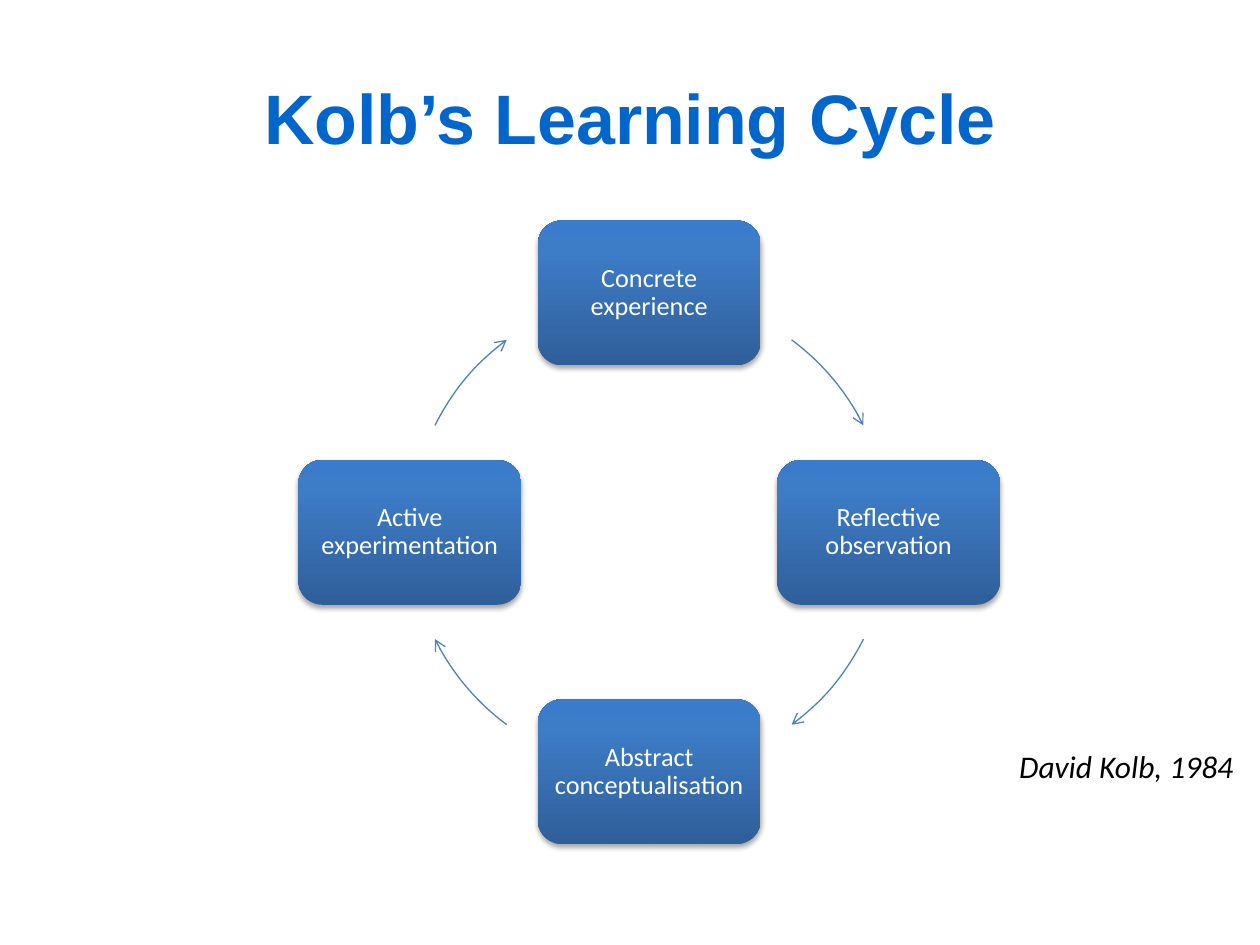
from copy import deepcopy

from lxml.etree import SubElement
from pptx import Presentation
from pptx.dml.color import RGBColor
from pptx.enum.shapes import MSO_SHAPE
from pptx.enum.text import MSO_ANCHOR, PP_ALIGN
from pptx.oxml.ns import qn
from pptx.util import Pt

CENTER_X, CENTER_Y, RADIUS = 371, 304.2, 136.8
STAGE_SPACING = 136.8
STAGE_WIDTH, STAGE_HEIGHT = 127.4, 82.8
GRADIENT = [(0, "2F5F99"), (0.8, "3D7CC7"), (1, "3A7CCB")]
STAGES = [
    ("Concrete experience", 0, -1),
    ("Reflective observation", 1, 0),
    ("Abstract conceptualisation", 0, 1),
    ("Active experimentation", -1, 0),
]
ARROW_ANGLES = [320, 40, 140, 220]
ARROW_HALF_SWEEP = 13.5


def color(value):
    return RGBColor.from_string(value)


def write(box, text, *, size, fill, font="Calibri", bold=False, italic=False,
          align=PP_ALIGN.LEFT, anchor=MSO_ANCHOR.TOP, spacing=1.0,
          wrap=True, margins=(7.2, 3.6)):
    frame = box.text_frame
    frame.word_wrap = wrap
    frame.vertical_anchor = anchor
    frame.margin_left = frame.margin_right = Pt(margins[0])
    frame.margin_top = frame.margin_bottom = Pt(margins[1])
    para = frame.paragraphs[0]
    para.alignment = align
    para.line_spacing = spacing
    span = para.add_run()
    span.text = text
    span.font.name = font
    span.font.size = Pt(size)
    span.font.bold = bold
    span.font.italic = italic
    span.font.color.rgb = color(fill)


def add_label(page, text, left, top, width, height, **style):
    box = page.shapes.add_textbox(Pt(left), Pt(top), Pt(width), Pt(height))
    write(box, text, **style)


def fill_gradient(shape):
    """Fill from dark at the bottom to light at the top."""
    shape.fill.gradient()
    shape.fill.gradient_angle = 90
    stop_list = shape._element.spPr.find(qn("a:gradFill")).find(qn("a:gsLst"))
    stop_list.append(deepcopy(stop_list[-1]))
    for stop, (position, value) in zip(shape.fill.gradient_stops, GRADIENT):
        stop.position = position
        stop.color.rgb = color(value)


def add_shadow(shape):
    shape.shadow.inherit = False
    effects = shape._element.spPr.find(qn("a:effectLst"))
    shadow = SubElement(effects, qn("a:outerShdw"), blurRad=str(Pt(3.1)),
                        dist=str(Pt(1.8)), dir="5400000", rotWithShape="0")
    shade = SubElement(shadow, qn("a:srgbClr"), val="000000")
    SubElement(shade, qn("a:alpha"), val="35000")


def add_stage(page, text, column, row):
    left = CENTER_X + column * STAGE_SPACING - STAGE_WIDTH / 2
    top = CENTER_Y + row * STAGE_SPACING - STAGE_HEIGHT / 2
    stage = page.shapes.add_shape(MSO_SHAPE.ROUNDED_RECTANGLE, Pt(left), Pt(top),
                                  Pt(STAGE_WIDTH), Pt(STAGE_HEIGHT))
    fill_gradient(stage)
    stage.line.fill.background()
    add_shadow(stage)
    # The rounded corners already inset the text by about 4 points.
    write(stage, text, size=15, fill="FFFFFF", align=PP_ALIGN.CENTER,
          anchor=MSO_ANCHOR.MIDDLE, spacing=0.9, margins=(3, 3))


def add_cycle_arrow(page, middle_angle):
    """Draw a clockwise arc around the cycle, centred on an angle in degrees."""
    arc = page.shapes.add_shape(MSO_SHAPE.ARC, Pt(CENTER_X - RADIUS),
                                Pt(CENTER_Y - RADIUS), Pt(2 * RADIUS), Pt(2 * RADIUS))
    # An adjustment of 0.6 is one degree.
    arc.adjustments[0] = (middle_angle - ARROW_HALF_SWEEP) * 0.6
    arc.adjustments[1] = (middle_angle + ARROW_HALF_SWEEP) * 0.6
    arc.fill.background()
    arc.shadow.inherit = False
    arc.line.color.rgb = color("4F81BD")
    arc.line.width = Pt(0.75)
    SubElement(arc._element.spPr.find(qn("a:ln")), qn("a:tailEnd"), type="arrow")


def main():
    deck = Presentation()
    deck.slide_width, deck.slide_height = Pt(720), Pt(540)
    page = deck.slides.add_slide(deck.slide_layouts[6])
    add_label(page, "Kolb’s Learning Cycle", 36, 21.6, 648, 90, size=40,
              fill="0066CC", font="Arial", bold=True, align=PP_ALIGN.CENTER,
              anchor=MSO_ANCHOR.MIDDLE)
    for stage, angle in zip(STAGES, ARROW_ANGLES):
        add_stage(page, *stage)
        add_cycle_arrow(page, angle)
    add_label(page, "David Kolb, 1984", 575.3, 423.4, 138.2, 28.8, size=18,
              fill="000000", italic=True, wrap=False)
    deck.save("out.pptx")


if __name__ == "__main__":
    main()
